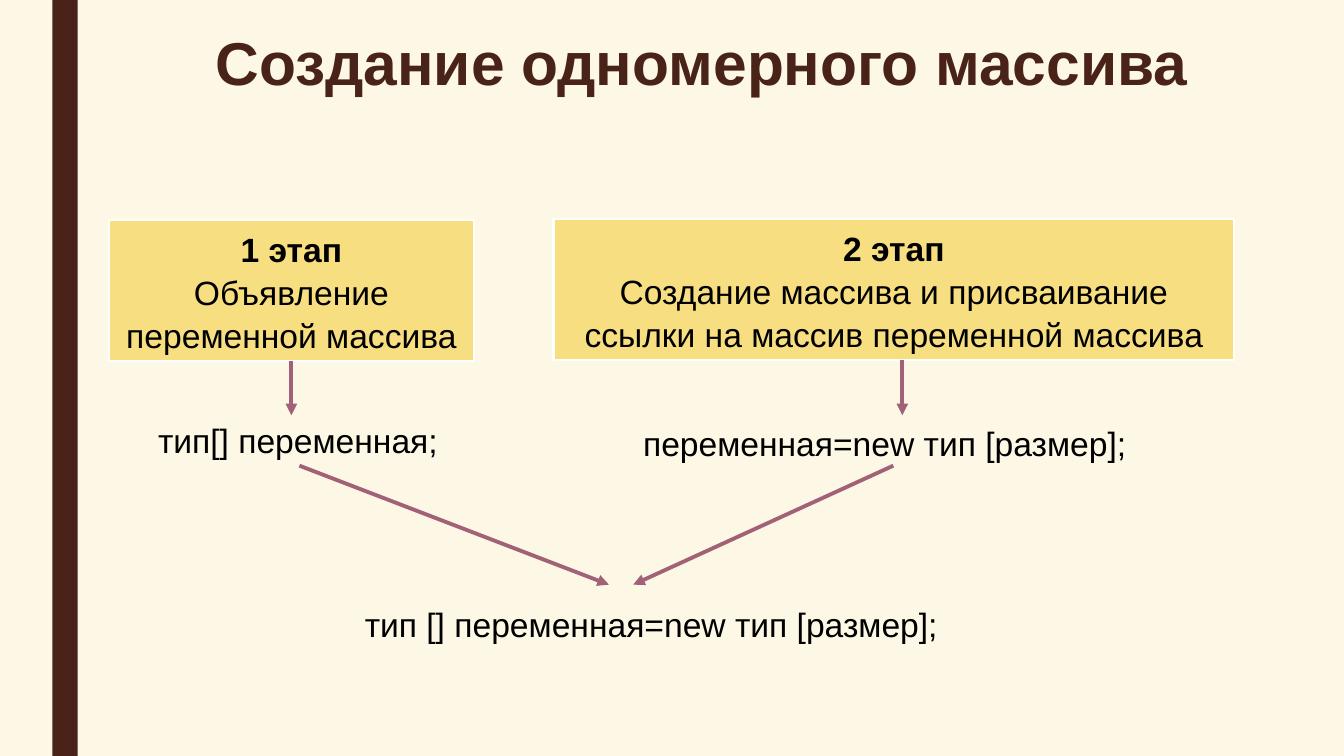
from dataclasses import dataclass

from lxml import etree
from pptx import Presentation
from pptx.dml.color import RGBColor
from pptx.enum.shapes import MSO_CONNECTOR, MSO_SHAPE
from pptx.enum.text import MSO_ANCHOR, MSO_AUTO_SIZE, PP_ALIGN
from pptx.oxml.ns import qn
from pptx.util import Inches, Pt

RECTANGLE = MSO_SHAPE.RECTANGLE
STRAIGHT = MSO_CONNECTOR.STRAIGHT
CENTER, LEFT = PP_ALIGN.CENTER, PP_ALIGN.LEFT
TOP, MIDDLE = MSO_ANCHOR.TOP, MSO_ANCHOR.MIDDLE
FIT_SHAPE = MSO_AUTO_SIZE.SHAPE_TO_FIT_TEXT
BOTTOM_SIDE = 2


@dataclass(frozen=True)
class Theme:
    font: str = "Arial"
    background: RGBColor = RGBColor.from_string("FDF8E5")
    brown: RGBColor = RGBColor.from_string("4A2318")
    yellow: RGBColor = RGBColor.from_string("F7DE81")
    white: RGBColor = RGBColor.from_string("FFFFFF")
    black: RGBColor = RGBColor.from_string("000000")
    plum: RGBColor = RGBColor.from_string("A26176")
    title_size: float = 43.2
    body_size: float = 24
    border_width: float = 1.5
    arrow_width: float = 2.75


class SlideBuilder:
    def __init__(self, slide, theme):
        self.slide = slide
        self.theme = theme
        fill = slide.background.fill
        fill.solid()
        fill.fore_color.rgb = theme.background

    def rectangle(self, left, top, width, height, color):
        shape = self.slide.shapes.add_shape(
            RECTANGLE, Inches(left), Inches(top), Inches(width), Inches(height))
        shape.shadow.inherit = False
        shape.fill.solid()
        shape.fill.fore_color.rgb = color
        shape.line.fill.background()
        return shape

    def text_box(self, left, top, width, height):
        return self.slide.shapes.add_textbox(
            Inches(left), Inches(top), Inches(width), Inches(height))

    def paragraph(self, paragraph, text, size, color, bold=False,
                  align=LEFT, spacing=1.0, after=0):
        paragraph.alignment = align
        paragraph.line_spacing = spacing
        paragraph.space_after = Pt(after)
        run = paragraph.add_run()
        run.text = text
        run.font.name = self.theme.font
        run.font.size = Pt(size)
        run.font.bold = bold
        run.font.color.rgb = color

    def title(self, text, left, top, width, height):
        frame = self.text_box(left, top, width, height).text_frame
        frame.word_wrap = True
        frame.vertical_anchor = TOP
        self.paragraph(frame.paragraphs[0], text, self.theme.title_size,
                       self.theme.brown, bold=True, align=CENTER, spacing=0.89)

    def stage(self, heading, description, left, top, width, height):
        box = self.rectangle(left, top, width, height, self.theme.yellow)
        box.line.color.rgb = self.theme.white
        box.line.width = Pt(self.theme.border_width)
        frame = box.text_frame
        frame.word_wrap = True
        frame.auto_size = FIT_SHAPE
        frame.vertical_anchor = MIDDLE
        self.paragraph(frame.paragraphs[0], heading, self.theme.body_size,
                       self.theme.black, bold=True, align=CENTER, spacing=1.07)
        self.paragraph(frame.add_paragraph(), description, self.theme.body_size,
                       self.theme.black, align=CENTER, spacing=1.07)
        return box

    def code(self, text, left, top, width, height, spacing=1.07, after=8):
        box = self.text_box(left, top, width, height)
        frame = box.text_frame
        frame.word_wrap = False
        frame.auto_size = FIT_SHAPE
        self.paragraph(frame.paragraphs[0], text, self.theme.body_size,
                       self.theme.black, spacing=spacing, after=after)
        return box

    def arrow(self, start, end, source=None):
        """Draw an arrow; if source is given, join its start to that shape's bottom."""
        connector = self.slide.shapes.add_connector(
            STRAIGHT, *(Inches(value) for value in (*start, *end)))
        if source is not None:
            connector.begin_connect(source, BOTTOM_SIDE)
        connector.line.color.rgb = self.theme.plum
        connector.line.width = Pt(self.theme.arrow_width)
        etree.SubElement(connector.line._get_or_add_ln(), qn("a:tailEnd"), type="triangle")
        etree.SubElement(connector._element.spPr, qn("a:effectLst"))


def main():
    presentation = Presentation()
    presentation.slide_width = Inches(13.33)
    presentation.slide_height = Inches(7.5)
    theme = Theme()
    builder = SlideBuilder(
        presentation.slides.add_slide(presentation.slide_layouts[6]), theme)

    builder.rectangle(0.52, 0, 0.25, 7.5, theme.brown)
    builder.title("Создание одномерного массива", 1.71, 0.29, 10.5, 1.25)

    declaration_stage = builder.stage(
        "1 этап", "Объявление переменной массива", 1.08, 2.18, 3.62, 1.4)
    builder.stage(
        "2 этап", "Создание массива и присваивание ссылки на массив переменной массива",
        5.49, 2.17, 6.75, 1.4)

    declaration = builder.code(
        "тип[] переменная;", 1.47, 4.12, 3, 0.5, spacing=1.0, after=0)
    builder.code("переменная=new тип [размер];", 6.28, 4.12, 5.04, 0.53)

    builder.arrow((2.89, 3.58), (2.89, 4.12), declaration_stage)
    builder.arrow((8.95, 3.57), (8.95, 4.12))
    builder.arrow((2.97, 4.62), (6.04, 5.8), declaration)
    builder.arrow((8.86, 4.62), (6.28, 5.8))

    builder.code("тип [] переменная=new тип [размер];", 3.52, 5.91, 5.94, 0.53)

    presentation.save("out.pptx")


if __name__ == "__main__":
    main()
